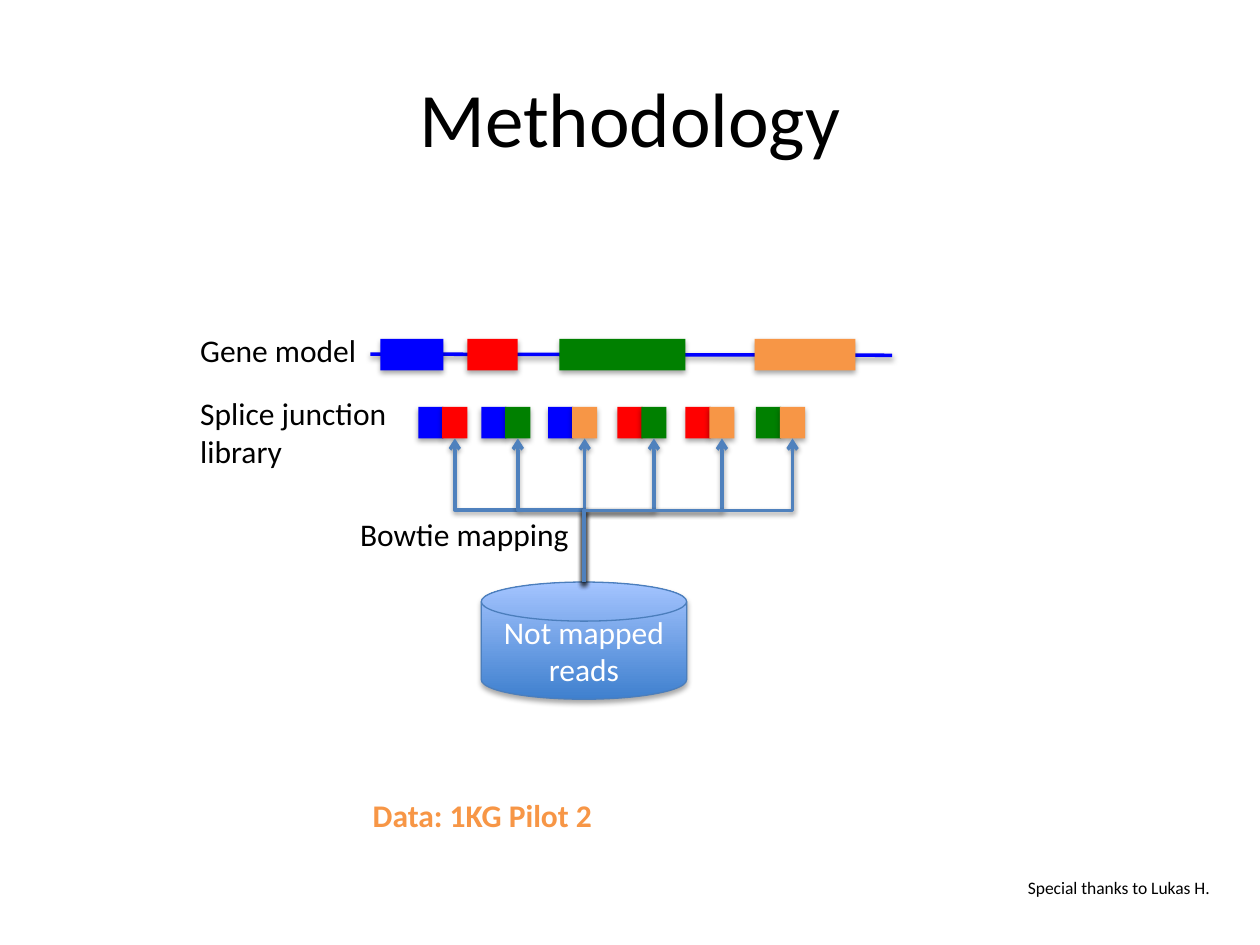
from lxml.etree import SubElement
from pptx import Presentation
from pptx.dml.color import RGBColor
from pptx.enum.shapes import MSO_CONNECTOR as CONN, MSO_SHAPE as SHAPE
from pptx.enum.text import MSO_ANCHOR, PP_ALIGN
from pptx.oxml.ns import qn
from pptx.util import Inches, Pt

# Content: colours, exons, junctions and labels
BLUE, RED, GREEN, ORANGE = "0000FF", "FF0000", "008000", "F79646"
BLACK, WHITE, ARROW = "000000", "FFFFFF", "4F81BD"
EXONS = [(3.02, 0.5, BLUE), (3.71, 0.4, RED), (4.44, 1, GREEN), (5.99, 0.8, ORANGE)]
JUNCTIONS = [(3.32, BLUE, RED), (3.82, BLUE, GREEN), (4.35, BLUE, ORANGE),
             (4.9, RED, GREEN), (5.44, RED, ORANGE), (6, GREEN, ORANGE)]
LABELS = [  # lines, box, format
    (["Gene model"], (1.49, 2.58, 1.45, 0.4), {}),
    (["Splice junction", "library"], (1.49, 3.08, 1.69, 0.71), {}),
    (["Bowtie mapping"], (2.76, 4.04, 1.87, 0.4), {}),
    (["Data: 1KG Pilot 2"], (2.86, 6.27, 1.96, 0.4), {"color": ORANGE, "bold": True}),
    (["Special thanks to Lukas H."], (8.06, 6.91, 1.66, 0.27), {"size": Pt(10)}),
]
EXON_Y, JUNCTION_Y, BOX_H, HALF_W = 2.69, 3.23, 0.25, 0.2
DISK = (3.82, 4.62, 1.63, 0.93)


def rgb(value):
    return RGBColor.from_string(value)


def write(tf, lines, color=BLACK, align=PP_ALIGN.LEFT, **fmt):
    for i, line in enumerate(lines):
        p = tf.paragraphs[0] if i == 0 else tf.add_paragraph()
        p.alignment = align
        r = p.add_run()
        r.text = line
        r.font.color.rgb = rgb(color)
        for name, value in {"name": "Calibri", "size": Pt(18), **fmt}.items():
            setattr(r.font, name, value)


def add_shadow(sp, alpha, distance):
    effects = SubElement(sp._element.spPr, qn("a:effectLst"))
    shadow = SubElement(effects, qn("a:outerShdw"), blurRad=str(Pt(3.1)),
                        dist=str(Pt(distance)), dir="5400000", rotWithShape="0")
    color = SubElement(shadow, qn("a:srgbClr"), val=BLACK)
    SubElement(color, qn("a:alpha"), val=str(alpha * 1000))


def add_box(x, y, w, color):
    sp = s.shapes.add_shape(SHAPE.RECTANGLE, *map(Inches, (x, y, w, BOX_H)))
    sp.fill.solid()
    sp.fill.fore_color.rgb = rgb(color)
    sp.line.fill.background()
    add_shadow(sp, 35, 1.8)


def add_line(kind, x1, y1, x2, y2, color, arrow=False):
    c = s.shapes.add_connector(kind, *map(Inches, (x1, y1, x2, y2)))
    c.line.color.rgb = rgb(color)
    c.line.width = Pt(2)
    if arrow:
        SubElement(c.line._get_or_add_ln(), qn("a:tailEnd"), type="arrow")
    add_shadow(c, 38, 1.6)
    return c


def add_upward_elbow(x1, y1, x2, y2):
    """Lay the elbow out sideways about its centre, then turn it upward."""
    cx, cy = (x1 + x2) / 2, (y1 + y2) / 2
    half_run, half_rise = (y1 - y2) / 2, (x2 - x1) / 2
    c = add_line(CONN.ELBOW, cx - half_run, cy - half_rise,
                 cx + half_run, cy + half_rise, ARROW, arrow=True)
    c._element.spPr.find(qn("a:xfrm")).set("rot", str(270 * 60000))


prs = Presentation()
prs.slide_width, prs.slide_height = Inches(10), Inches(7.5)
s = prs.slides.add_slide(prs.slide_layouts[5])

# Title
title = s.shapes.title
title.left, title.top, title.width, title.height = map(Inches, (0.5, 0.3, 9, 1.25))
title.text_frame.vertical_anchor = MSO_ANCHOR.MIDDLE
write(title.text_frame, ["Methodology"], align=PP_ALIGN.CENTER, size=Pt(44))

# Gene model
add_line(CONN.STRAIGHT, 2.94, 2.81, 7.08, 2.82, BLUE)
for x, w, color in EXONS:
    add_box(x, EXON_Y, w, color)

# Splice junction library
for x, first, second in JUNCTIONS:
    add_box(x, JUNCTION_Y, HALF_W, first)
    add_box(x + HALF_W - 0.01, JUNCTION_Y, HALF_W, second)

# Unmapped reads
disk = s.shapes.add_shape(SHAPE.FLOWCHART_MAGNETIC_DISK, *map(Inches, DISK))
disk.fill.gradient()
disk.fill.gradient_angle = 90
for stop, color in zip(disk.fill.gradient_stops, ("3F80CE", "A4C4FF")):
    stop.color.rgb = rgb(color)
disk.line.color.rgb = rgb("4B7EBC")
disk.line.width = Pt(0.75)
add_shadow(disk, 35, 1.8)
disk.text_frame.word_wrap = True
disk.text_frame.vertical_anchor = MSO_ANCHOR.MIDDLE
write(disk.text_frame, ["Not mapped reads"], WHITE, PP_ALIGN.CENTER)

# Mapping arrows, from the disk to the second half of each junction
for x, _, _ in JUNCTIONS:
    add_upward_elbow(DISK[0] + DISK[2] / 2, DISK[1],
                     x + 1.5 * HALF_W - 0.01, JUNCTION_Y + BOX_H)

# Labels
for lines, box, fmt in LABELS:
    tf = s.shapes.add_textbox(*map(Inches, box)).text_frame
    tf.word_wrap = False
    write(tf, lines, **fmt)

prs.save("out.pptx")
